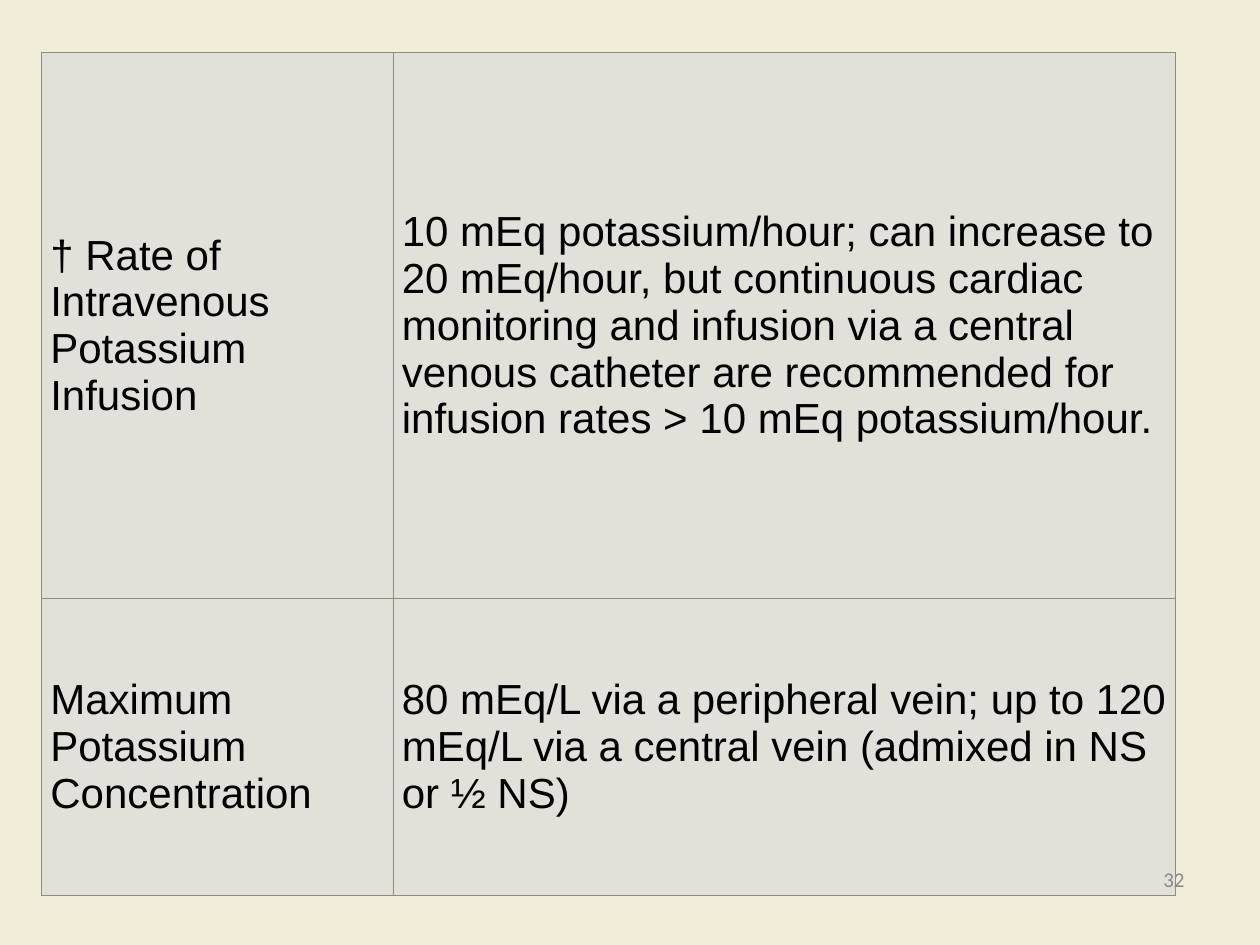
from dataclasses import dataclass

import pptx
import pptx.dml.color
import pptx.enum.text
import pptx.oxml
import pptx.oxml.ns
import pptx.util

Inches = pptx.util.Inches
Pt = pptx.util.Pt
RGB = pptx.dml.color.RGBColor.from_string


@dataclass(frozen=True)
class Theme:
    background: str = "F1ECD8"
    cell: str = "E1E1D9"
    border: str = "8D8D7F"
    ink: str = "000000"
    muted: str = "898989"
    body_font: str = "Arial"
    number_font: str = "Calibri"
    body_size: float = 24
    number_size: float = 12
    border_width: float = 0.75


@dataclass(frozen=True)
class Guideline:
    topic: str
    advice: str
    height: float


THEME = Theme()
COLUMN_WIDTHS = (2.79, 6.21)
GUIDELINES = (
    Guideline(
        "† Rate of Intravenous Potassium Infusion",
        "10 mEq potassium/hour; can increase to 20 mEq/hour, but continuous "
        "cardiac monitoring and infusion via a central venous catheter are "
        "recommended for infusion rates > 10 mEq potassium/hour.",
        4.33,
    ),
    Guideline(
        "Maximum Potassium Concentration",
        "80 mEq/L via a peripheral vein; up to 120 mEq/L via a central vein "
        "(admixed in NS or ½ NS)",
        2.36,
    ),
)


def set_font(paragraph, name: str, size: float, color: str) -> None:
    paragraph.font.name = name
    paragraph.font.size = Pt(size)
    paragraph.font.color.rgb = RGB(color)


def add_borders(cell) -> None:
    properties = cell._tc.get_or_add_tcPr()
    for position, side in enumerate(("lnL", "lnR", "lnT", "lnB")):
        line = pptx.oxml.parse_xml(
            f'<a:{side} {pptx.oxml.ns.nsdecls("a")} w="{Pt(THEME.border_width)}">'
            f'<a:solidFill><a:srgbClr val="{THEME.border}"/></a:solidFill></a:{side}>'
        )
        properties.insert(position, line)


def fill_cell(cell, text: str) -> None:
    cell.text = text
    cell.vertical_anchor = pptx.enum.text.MSO_ANCHOR.MIDDLE
    cell.margin_left = cell.margin_right = Inches(0.07)
    cell.margin_top = cell.margin_bottom = 0
    cell.fill.solid()
    cell.fill.fore_color.rgb = RGB(THEME.cell)
    set_font(cell.text_frame.paragraphs[0], THEME.body_font, THEME.body_size, THEME.ink)
    add_borders(cell)


def add_guidelines(slide, guidelines: tuple[Guideline, ...]) -> None:
    table = slide.shapes.add_table(
        len(guidelines), len(COLUMN_WIDTHS), Inches(0.33), Inches(0.42),
        Inches(sum(COLUMN_WIDTHS)), Inches(sum(g.height for g in guidelines)),
    ).table
    table.first_row = table.horz_banding = False
    for column, width in zip(table.columns, COLUMN_WIDTHS):
        column.width = Inches(width)
    for index, guideline in enumerate(guidelines):
        table.rows[index].height = Inches(guideline.height)
        fill_cell(table.cell(index, 0), guideline.topic)
        fill_cell(table.cell(index, 1), guideline.advice)


def add_page_number(slide, number: str) -> None:
    frame = slide.shapes.add_textbox(
        Inches(7.17), Inches(6.83), Inches(2.33), Inches(0.52)
    ).text_frame
    frame.word_wrap = True
    frame.text = number
    paragraph = frame.paragraphs[0]
    paragraph.alignment = pptx.enum.text.PP_ALIGN.RIGHT
    set_font(paragraph, THEME.number_font, THEME.number_size, THEME.muted)


def main() -> None:
    deck = pptx.Presentation()
    deck.slide_width, deck.slide_height = Inches(10), Inches(7.5)
    slide = deck.slides.add_slide(deck.slide_layouts[6])

    # Background
    slide.background.fill.solid()
    slide.background.fill.fore_color.rgb = RGB(THEME.background)

    # Potassium guidelines and page number
    add_guidelines(slide, GUIDELINES)
    add_page_number(slide, "32")

    deck.save("out.pptx")


if __name__ == "__main__":
    main()
